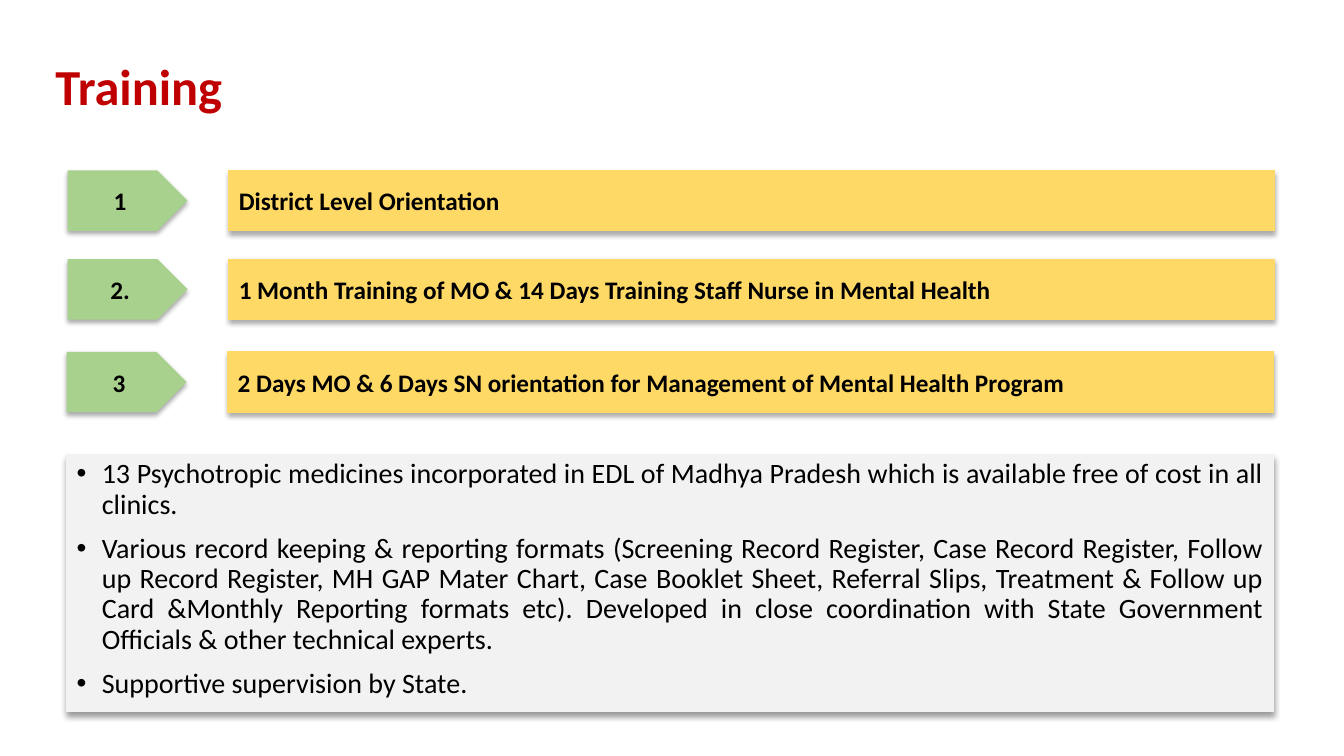
from lxml import etree
from pptx import Presentation
from pptx.dml.color import RGBColor
from pptx.enum.shapes import MSO_SHAPE
from pptx.enum.text import MSO_ANCHOR, MSO_AUTO_SIZE, PP_ALIGN
from pptx.oxml.ns import qn
from pptx.util import Inches, Pt

RECT, ARROW = MSO_SHAPE.RECTANGLE, MSO_SHAPE.PENTAGON
TOP, MIDDLE = MSO_ANCHOR.TOP, MSO_ANCHOR.MIDDLE
LEFT, CENTER, JUSTIFY = PP_ALIGN.LEFT, PP_ALIGN.CENTER, PP_ALIGN.JUSTIFY
NO_FIT = MSO_AUTO_SIZE.NONE

FONT = "Calibri"
COLORS = {
    "title": "C00000",
    "text": "000000",
    "bar": "FFD966",
    "tag": "A9D18E",
    "panel": "F2F2F2",
    "shadow": "000000",
}

# Box of each row (left, top, width, height), its number and its wording
STEPS = [
    ((0.67, 1.69, 11.97, 0.6), "1", "District Level Orientation"),
    ((0.67, 2.57, 11.97, 0.6), "2.",
     "1 Month Training of MO & 14 Days Training Staff Nurse in Mental Health"),
    ((0.66, 3.49, 11.97, 0.6), "3",
     "2 Days MO & 6 Days SN orientation for Management of Mental Health Program"),
]
NOTES = [
    "13 Psychotropic medicines incorporated in EDL of Madhya Pradesh which is "
    "available free of cost in all clinics. ",
    "Various record keeping & reporting formats (Screening Record Register, "
    "Case Record Register, Follow up Record Register, MH GAP Mater Chart, "
    "Case Booklet Sheet, Referral Slips, Treatment & Follow up Card &Monthly "
    "Reporting formats etc). Developed in close coordination with State "
    "Government Officials & other technical experts.",
    "Supportive supervision by State.",
]


def color(name):
    return RGBColor.from_string(COLORS[name])


def place(shape, box):
    shape.left, shape.top, shape.width, shape.height = map(Inches, box)


def add_run(para, text, size, tint="text", bold=False):
    run = para.add_run()
    run.text = text
    font = run.font
    font.name, font.size, font.bold = FONT, Pt(size), bold
    font.color.rgb = color(tint)


def paint(shape, tint, line=None):
    """Fill the shape; line is its outline width in points, if it has one."""
    shape.fill.solid()
    shape.fill.fore_color.rgb = color(tint)
    if line:
        shape.line.color.rgb = color(tint)
        shape.line.width = Pt(line)
    else:
        shape.line.fill.background()


def shade(shape, alpha, blur, dist):
    """Drop a soft shadow straight down; alpha is in percent."""
    shape.shadow.inherit = False
    effects = shape.element.spPr.find(qn("a:effectLst"))
    outer = etree.SubElement(
        effects, qn("a:outerShdw"), blurRad=str(Pt(blur)), dist=str(Pt(dist)),
        dir="5400000", algn="t", rotWithShape="0")
    tone = etree.SubElement(outer, qn("a:srgbClr"), val=COLORS["shadow"])
    etree.SubElement(tone, qn("a:alpha"), val=str(alpha * 1000))


def add_block(slide, kind, box, tint, text, align, line=None):
    shape = slide.shapes.add_shape(kind, *map(Inches, box))
    paint(shape, tint, line)
    shade(shape, 32, 3.5, 2.2)
    frame = shape.text_frame
    frame.word_wrap, frame.vertical_anchor = True, MIDDLE
    para = frame.paragraphs[0]
    para.alignment = align
    add_run(para, text, 18, bold=True)


def add_step(slide, box, number, text):
    left, top, width, height = box
    indent = 1.6
    add_block(slide, RECT, (left + indent, top, width - indent, height),
              "bar", text, LEFT, line=0.5)
    add_block(slide, ARROW, (left, top, 1.19, height), "tag", number, CENTER)


def set_title(slide, box, text):
    title = slide.shapes.title
    place(title, box)
    frame = title.text_frame
    frame.auto_size, frame.vertical_anchor = NO_FIT, TOP
    para = frame.paragraphs[0]
    para.alignment = LEFT
    add_run(para, text, 36, "title", bold=True)


def set_bullet(para, indent):
    props = para._p.get_or_add_pPr()
    props.set("marL", str(Inches(indent)))
    props.set("indent", str(-Inches(indent)))
    etree.SubElement(props, qn("a:buFont"), typeface="Arial")
    etree.SubElement(props, qn("a:buChar"), char="•")


def set_notes(slide, box, notes):
    body = slide.placeholders[1]
    place(body, box)
    paint(body, "panel", line=0.75)
    shade(body, 40, 4, 3)
    frame = body.text_frame
    frame.auto_size, frame.vertical_anchor = NO_FIT, TOP
    for i, note in enumerate(notes):
        para = frame.add_paragraph() if i else frame.paragraphs[0]
        para.alignment = JUSTIFY
        para.line_spacing, para.space_before = 0.9, Pt(10)
        set_bullet(para, 0.25)
        add_run(para, note, 20)


def main():
    deck = Presentation()
    deck.slide_width, deck.slide_height = Inches(13.33), Inches(7.5)
    slide = deck.slides.add_slide(deck.slide_layouts[1])
    set_title(slide, (0.45, 0.5, 5.51, 0.71), "Training")
    for box, number, text in STEPS:
        add_step(slide, box, number, text)
    set_notes(slide, (0.66, 4.51, 11.97, 2.55), NOTES)
    deck.save("out.pptx")


if __name__ == "__main__":
    main()
